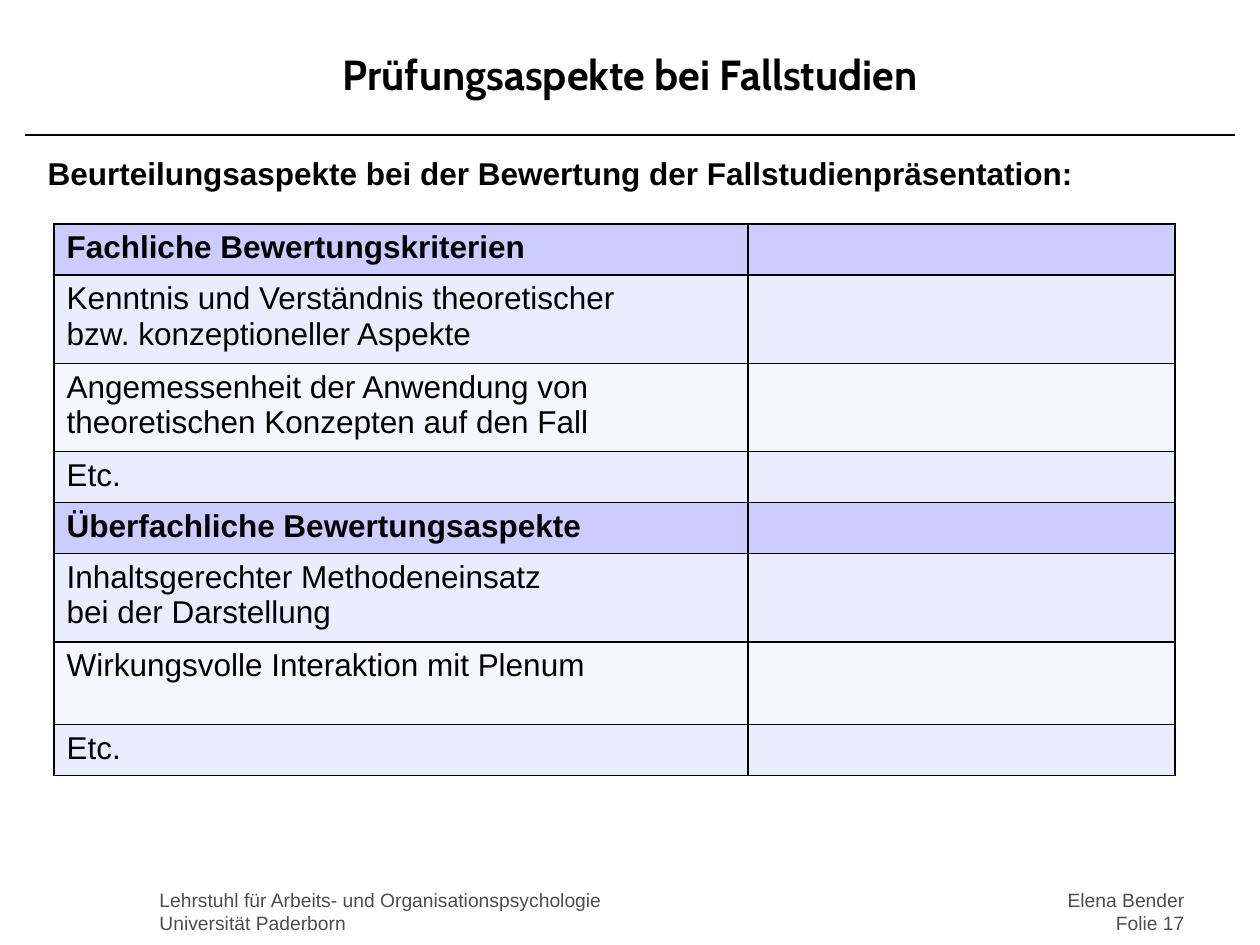
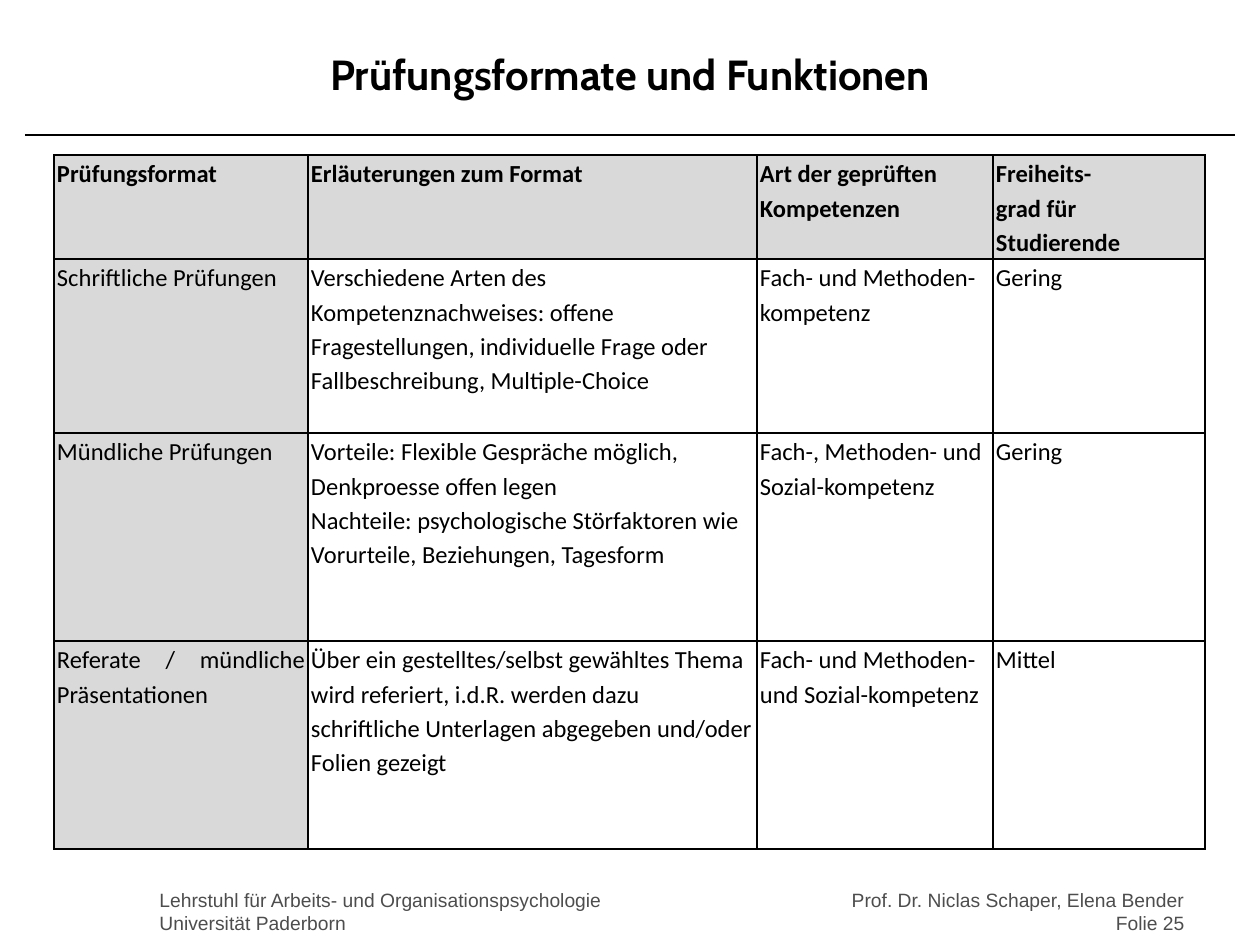
from lxml import etree
from pptx import Presentation
from pptx import util as u
from pptx.dml.color import RGBColor
from pptx.enum import shapes, text
from pptx.oxml.ns import qn

COLORS = {"ink": "000000", "footer": "4D4D4D", "section": "CCCCFF",
          "odd": "ECECFF", "even": "F6F6FF", "grey": "D9D9D9", "white": "FFFFFF"}
TITLE = {"name": "Cabin", "size": u.Pt(24), "bold": True}
LEAD = {"name": "Arial", "size": u.Pt(18), "bold": True}
FOOTER = {"name": "Arial", "size": u.Pt(11), "bold": False}
CRITERIA = {"name": "Arial", "size": u.Pt(18)}
FORMATS = {"name": "Calibri", "size": u.Pt(14)}
LEFT, CENTER, RIGHT, JUSTIFY = (text.PP_ALIGN.LEFT, text.PP_ALIGN.CENTER,
                                text.PP_ALIGN.RIGHT, text.PP_ALIGN.JUSTIFY)
PX = 914400 / 126


def write(p, words, style, color="ink", align=LEFT):
    p.text = words
    p.alignment = align
    for r in p.runs:
        for key, value in style.items():
            setattr(r.font, key, value)
        r.font.color.rgb = RGBColor.from_string(COLORS[color])


def add_grid(s, left, top, widths, heights):
    box = [round(v * PX) for v in (left, top, sum(widths), sum(heights))]
    table = s.shapes.add_table(len(heights), len(widths), *box).table
    for col, width in zip(table.columns, widths):
        col.width = round(width * PX)
    for row, height in zip(table.rows, heights):
        row.height = round(height * PX)
    for cell in table.iter_cells():
        tc_pr = cell._tc.get_or_add_tcPr()
        for side in ("a:lnL", "a:lnR", "a:lnT", "a:lnB"):
            ln = etree.SubElement(tc_pr, qn(side), w="12700")
            fill = etree.SubElement(ln, qn("a:solidFill"))
            etree.SubElement(fill, qn("a:srgbClr"), val=COLORS["ink"])
    return table


prs = Presentation()
prs.slide_width, prs.slide_height = round(1260 * PX), round(945 * PX)

# Shared frame: title, rule and footers
pages = [
    (1, "Prüfungsaspekte bei Fallstudien", "Elena Bender", "Folie 17"),
    (5, "Prüfungsformate und Funktionen", "Prof. Dr. Niclas Schaper, Elena Bender", "Folie 25"),
]
for layout, title, author, number in pages:
    s = prs.slides.add_slide(prs.slide_layouts[layout])
    sp = s.shapes.title
    sp.left, sp.top, sp.width, sp.height = [round(v * PX) for v in (63, 21, 1134, 105)]
    sp.text_frame.vertical_anchor = text.MSO_ANCHOR.MIDDLE
    write(sp.text_frame.paragraphs[0], title, TITLE, align=CENTER)

    rule = s.shapes.add_connector(shapes.MSO_CONNECTOR.STRAIGHT,
                                  *[round(v * PX) for v in (25, 135, 1235, 135)])
    rule.line.color.rgb = RGBColor.from_string(COLORS["ink"])
    rule.line.width = u.Pt(1.5)
    etree.SubElement(rule._element.spPr, qn("a:effectLst"))

    footers = [
        (147, 546, LEFT, ("Lehrstuhl für Arbeits- und Organisationspsychologie", "Universität Paderborn")),
        (640, 557, RIGHT, (author, number)),
    ]
    for left, width, align, lines in footers:
        sp = s.shapes.add_textbox(*[round(v * PX) for v in (left, 882, width, 63)])
        tf = sp.text_frame
        tf.word_wrap = True
        for i, line in enumerate(lines):
            p = tf.add_paragraph() if i else tf.paragraphs[0]
            write(p, line, FOOTER, "footer", align)

# Case study slide: lead sentence
s = prs.slides[0]
sp = s.placeholders[1]
sp.left, sp.top, sp.width, sp.height = [round(v * PX) for v in (35, 155, 1201, 39)]
sp.text_frame.auto_size = text.MSO_AUTO_SIZE.NONE
p = sp.text_frame.paragraphs[0]
p_pr = p._p.get_or_add_pPr()
p_pr.set("marL", "0")
p_pr.set("indent", "0")
etree.SubElement(p_pr, qn("a:buNone"))
p.line_spacing = 0.8
p.space_before = u.Pt(0)
write(p, "Beurteilungsaspekte bei der Bewertung der Fallstudienpräsentation:", LEAD)

# Case study slide: criteria with an empty column for the rating
criteria = [
    ("Fachliche Bewertungskriterien", "section", 51),
    ("Kenntnis und Verständnis theoretischer\nbzw. konzeptioneller Aspekte", "odd", 83),
    ("Angemessenheit der Anwendung von theoretischen Konzepten auf den Fall", "even", 83),
    ("Etc.", "odd", 51),
    ("Überfachliche Bewertungsaspekte", "section", 51),
    ("Inhaltsgerechter Methodeneinsatz\nbei der Darstellung", "odd", 84),
    ("Wirkungsvolle Interaktion mit Plenum", "even", 83),
    ("Etc.", "odd", 51),
]
table = add_grid(s, 54, 224, [694, 427], [height for _, _, height in criteria])
for row, (words, color, _) in zip(table.rows, criteria):
    for cell in row.cells:
        cell.fill.solid()
        cell.fill.fore_color.rgb = RGBColor.from_string(COLORS[color])
    write(row.cells[0].text_frame.paragraphs[0], words,
          {**CRITERIA, "bold": color == "section"})

# Formats slide: comparison table
formats = [
    ("Prüfungsformat", "Erläuterungen zum Format", "Art der geprüften Kompetenzen",
     "Freiheits-\ngrad für Studierende"),
    ("Schriftliche Prüfungen",
     "Verschiedene Arten des Kompetenznachweises: offene Fragestellungen, "
     "individuelle Frage oder Fallbeschreibung, Multiple-Choice",
     "Fach- und Methoden-kompetenz", "Gering"),
    ("Mündliche Prüfungen",
     "Vorteile: Flexible Gespräche möglich, Denkproesse offen legen\n"
     "Nachteile: psychologische Störfaktoren wie Vorurteile, Beziehungen, Tagesform",
     "Fach-, Methoden- und Sozial-kompetenz", "Gering"),
    ("Referate / mündliche Präsentationen",
     "Über ein gestelltes/selbst gewähltes Thema wird referiert, i.d.R. werden dazu "
     "schriftliche Unterlagen abgegeben und/oder Folien gezeigt",
     "Fach- und Methoden-und Sozial-kompetenz", "Mittel"),
]
table = add_grid(prs.slides[1], 54, 155, [254, 449, 236, 212], [104, 174, 208, 208])
for i, row in enumerate(formats):
    for j, words in enumerate(row):
        cell = table.cell(i, j)
        cell.margin_left = cell.margin_right = round(3 * PX)
        cell.margin_top = cell.margin_bottom = 0
        cell.fill.solid()
        shade = "grey" if i == 0 or j == 0 else "white"
        cell.fill.fore_color.rgb = RGBColor.from_string(COLORS[shade])
        p = cell.text_frame.paragraphs[0]
        p.line_spacing = 1.15
        align = JUSTIFY if j == 0 or (i == 0 and j == 1) else LEFT
        write(p, words, {**FORMATS, "bold": i == 0}, align=align)

prs.save("out.pptx")
